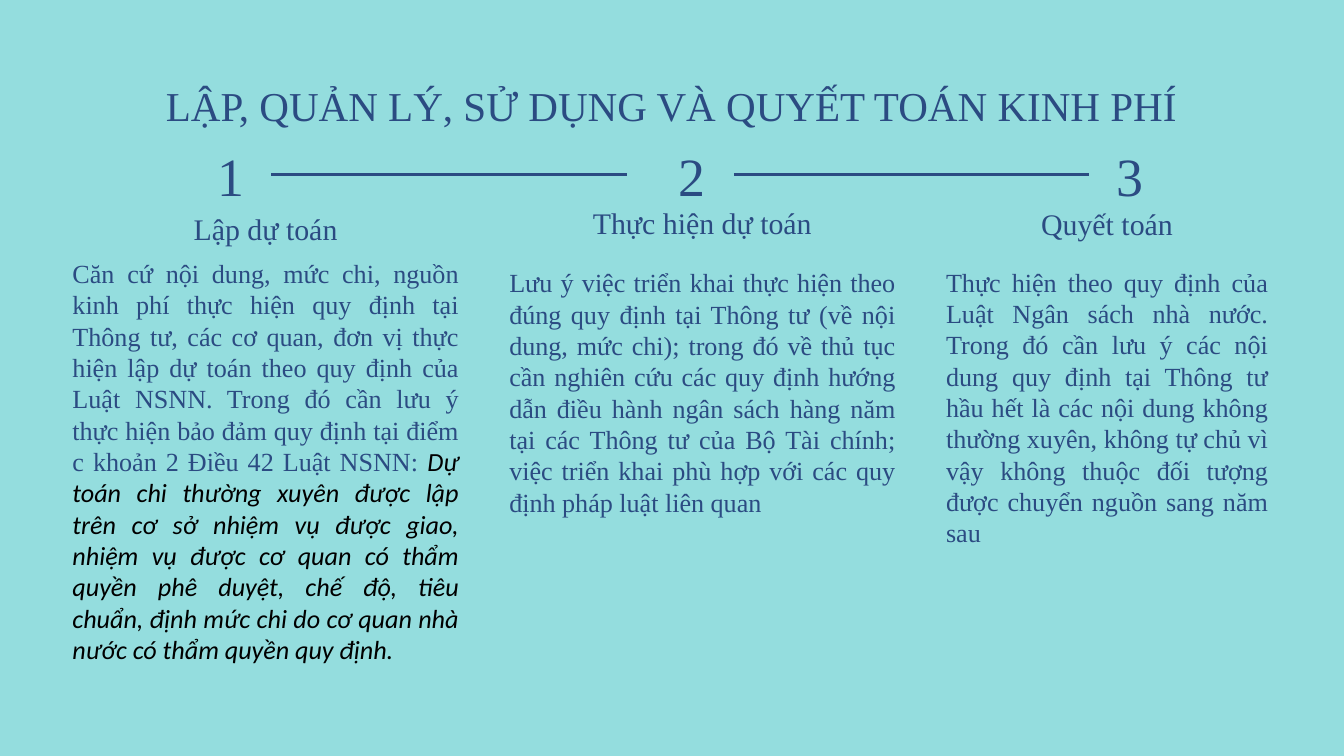
from dataclasses import dataclass

from lxml.etree import SubElement
from pptx import Presentation
from pptx.dml.color import RGBColor as Color
from pptx.enum.shapes import MSO_CONNECTOR as Connector
from pptx.enum.text import MSO_ANCHOR as Anchor
from pptx.enum.text import MSO_AUTO_SIZE as AutoSize
from pptx.enum.text import PP_ALIGN as Align
from pptx.oxml.ns import qn
from pptx.shapes.base import BaseShape
from pptx.slide import Slide
from pptx.util import Cm, Pt


@dataclass(frozen=True)
class Theme:
    background: Color = Color(0x94, 0xDD, 0xDE)
    ink: Color = Color(0x2B, 0x4B, 0x82)
    quote: Color = Color(0, 0, 0)
    font: str = "Times New Roman"
    quote_font: str = "Calibri"
    title_size: float = 44
    number_size: float = 57.7
    heading_size: float = 32
    body_size: float = 28
    title_leading: float = 66
    number_leading: float = 80.8
    text_leading: float = 33.6
    number_tracking: float = 9.9
    line_width: float = 3.94


@dataclass(frozen=True)
class Box:
    """Left, top, width and height in centimetres."""
    left: float
    top: float
    width: float
    height: float


@dataclass(frozen=True)
class Step:
    number_left: float
    heading: str
    heading_box: Box
    body: str
    body_box: Box
    quote: str = ""


THEME = Theme()
TITLE = "LẬP, QUẢN LÝ, SỬ DỤNG VÀ QUYẾT TOÁN KINH PHÍ"
NUMBER_TOP, NUMBER_WIDTH, NUMBER_HEIGHT = 4.98, 3.07, 2.97
LINE_Y, LINE_LENGTH = 6.6, 13.44
LINE_STARTS = (10.26, 27.74)

STEPS = (
    Step(
        7.19,
        "Lập dự toán", Box(2.74, 8.15, 14.6, 1.02),
        "Căn cứ nội dung, mức chi, nguồn kinh phí thực hiện quy định tại Thông tư, "
        "các cơ quan, đơn vị thực hiện lập dự toán theo quy định của Luật NSNN. "
        "Trong đó cần lưu ý thực hiện bảo đảm quy định tại điểm c khoản 2 Điều 42 "
        "Luật NSNN: ", Box(2.74, 9.73, 14.6, 17.04),
        "Dự toán chi thường xuyên được lập trên cơ sở nhiệm vụ được giao, nhiệm vụ "
        "được cơ quan có thẩm quyền phê duyệt, chế độ, tiêu chuẩn, định mức chi do "
        "cơ quan nhà nước có thẩm quyền quy định.",
    ),
    Step(
        24.61,
        "Thực hiện dự toán", Box(19.25, 7.92, 14.6, 1.47),
        "Lưu ý việc triển khai thực hiện theo đúng quy định tại Thông tư (về nội "
        "dung, mức chi); trong đó về thủ tục cần nghiên cứu các quy định hướng dẫn "
        "điều hành ngân sách hàng năm tại các Thông tư của Bộ Tài chính; việc triển "
        "khai phù hợp với các quy định pháp luật liên quan",
        Box(19.25, 10.08, 14.6, 14.63),
    ),
    Step(
        41.17,
        "Quyết toán", Box(35.76, 7.95, 12.17, 1.47),
        "Thực hiện theo quy định của Luật Ngân sách nhà nước. Trong đó cần lưu ý "
        "các nội dung quy định tại Thông tư hầu hết là các nội dung không thường "
        "xuyên, không tự chủ vì vậy không thuộc đối tượng được chuyển nguồn sang "
        "năm sau", Box(35.76, 10.06, 12.17, 14.55),
    ),
)


def write_text(shape: BaseShape, text: str, *, size: float, leading: float,
               align: Align = Align.CENTER, tracking: float = 0,
               quote: str = "") -> None:
    """Fill a shape with one paragraph, closed by an optional italic quote."""
    frame = shape.text_frame
    frame.word_wrap = True
    frame.auto_size = AutoSize.SHAPE_TO_FIT_TEXT
    frame.vertical_anchor = Anchor.TOP
    frame.margin_left = frame.margin_right = 0
    frame.margin_top = frame.margin_bottom = 0
    paragraph = frame.paragraphs[0]
    paragraph.alignment = align
    paragraph.line_spacing = Pt(leading)
    parts = [(text, THEME.font, THEME.ink, False)]
    if quote:
        parts.append((quote, THEME.quote_font, THEME.quote, True))
    for content, font, color, italic in parts:
        run = paragraph.add_run()
        run.text = content
        run.font.name = font
        run.font.size = Pt(size)
        run.font.color.rgb = color
        run.font.italic = italic
        if tracking:
            run._r.get_or_add_rPr().set("spc", str(round(tracking * 100)))


def place(shape: BaseShape, box: Box) -> None:
    shape.left, shape.top = Cm(box.left), Cm(box.top)
    shape.width, shape.height = Cm(box.width), Cm(box.height)


def add_text(slide: Slide, box: Box, text: str, **text_format) -> None:
    shape = slide.shapes.add_textbox(0, 0, 0, 0)
    place(shape, box)
    write_text(shape, text, **text_format)


def add_step(slide: Slide, number: int, step: Step) -> None:
    add_text(slide, step.body_box, step.body, size=THEME.body_size,
             leading=THEME.text_leading, align=Align.JUSTIFY, quote=step.quote)
    add_text(slide, step.heading_box, step.heading, size=THEME.heading_size,
             leading=THEME.text_leading)
    number_box = Box(step.number_left, NUMBER_TOP, NUMBER_WIDTH, NUMBER_HEIGHT)
    add_text(slide, number_box, str(number), size=THEME.number_size,
             leading=THEME.number_leading, tracking=THEME.number_tracking)


def add_line(slide: Slide, start: float) -> None:
    line = slide.shapes.add_connector(
        Connector.STRAIGHT, Cm(start), Cm(LINE_Y),
        Cm(start + LINE_LENGTH), Cm(LINE_Y))
    line.line.color.rgb = THEME.ink
    line.line.width = Pt(THEME.line_width)
    SubElement(line._element.spPr, qn("a:effectLst"))


def main() -> None:
    presentation = Presentation()
    presentation.slide_width, presentation.slide_height = Cm(50.8), Cm(28.58)
    title_only = presentation.slide_layouts[5]
    slide = presentation.slides.add_slide(title_only)
    slide.background.fill.solid()
    slide.background.fill.fore_color.rgb = THEME.background

    # Title
    place(slide.shapes.title, Box(3.12, 2.57, 44.55, 2.13))
    write_text(slide.shapes.title, TITLE, size=THEME.title_size,
               leading=THEME.title_leading)

    # Three numbered steps
    for number, step in enumerate(STEPS, start=1):
        add_step(slide, number, step)

    # Lines between the numbers
    for start in LINE_STARTS:
        add_line(slide, start)

    presentation.save("out.pptx")


if __name__ == "__main__":
    main()
